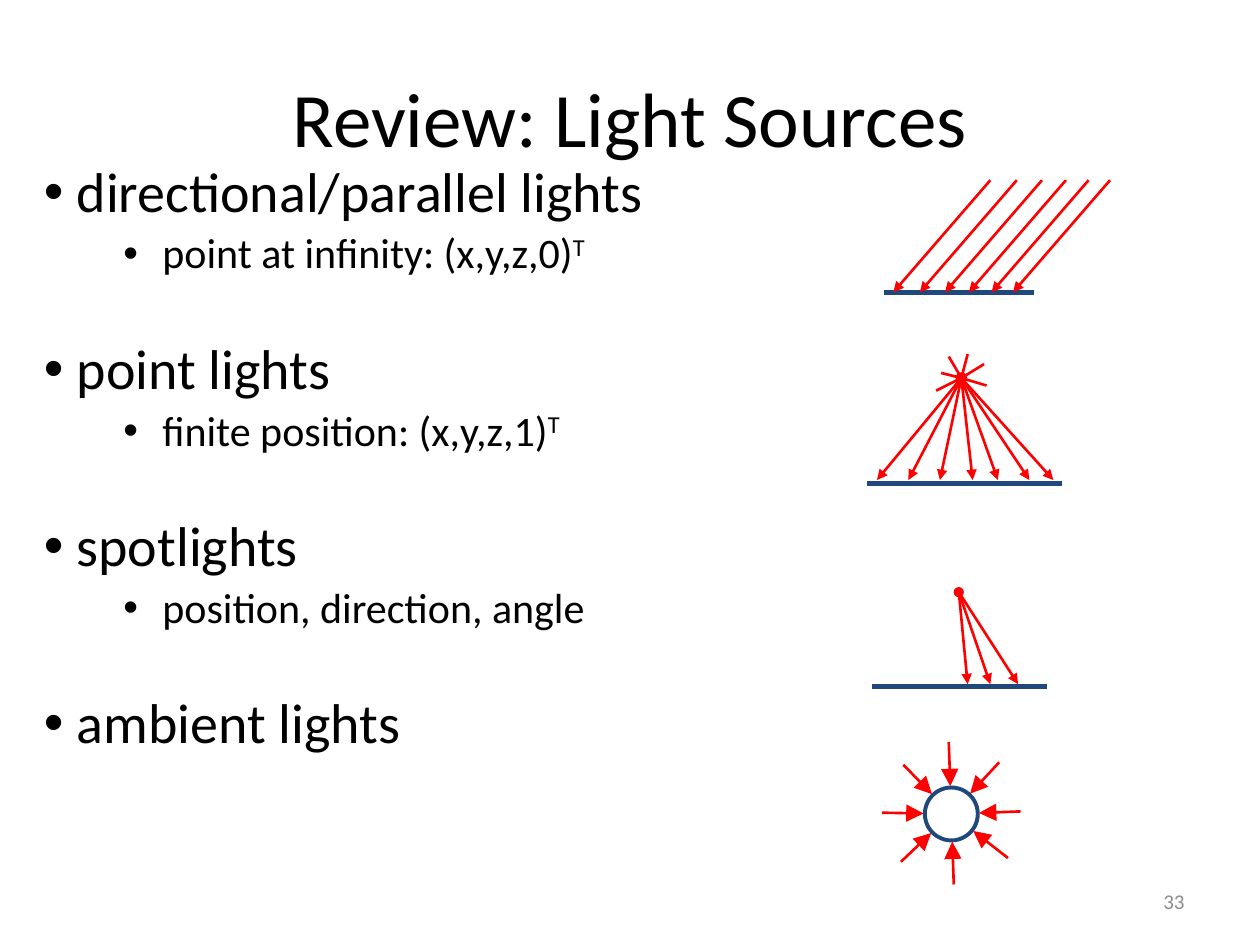
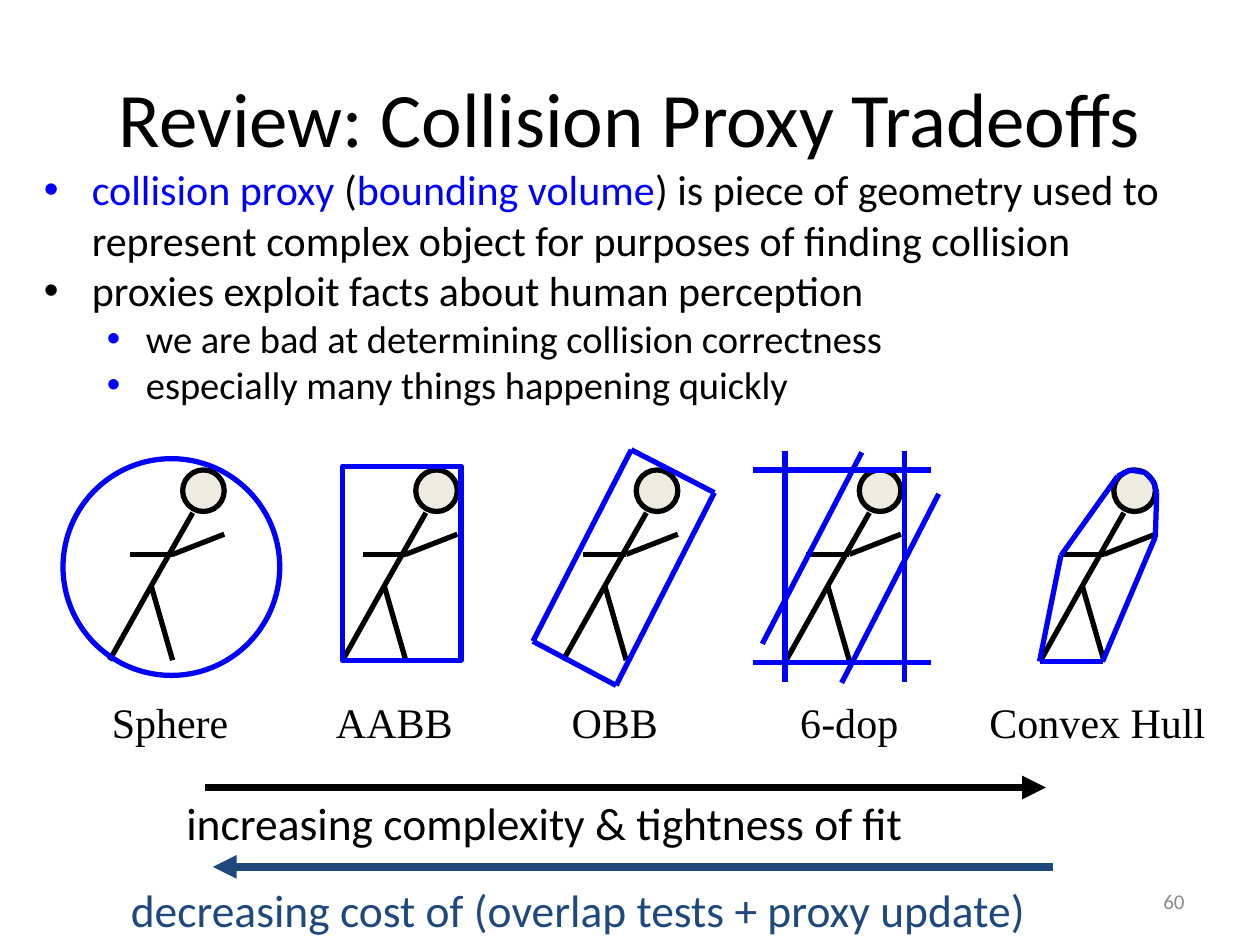
import math
from dataclasses import dataclass

import pptx
import pptx.dml.color
import pptx.enum.shapes
import pptx.enum.text
import pptx.oxml
import pptx.oxml.ns
import pptx.util

ALIGN = pptx.enum.text.PP_ALIGN
ANCHOR = pptx.enum.text.MSO_ANCHOR
SHAPE = pptx.enum.shapes.MSO_SHAPE
STRAIGHT = pptx.enum.shapes.MSO_CONNECTOR.STRAIGHT
inch = pptx.util.Inches


@dataclass(frozen=True)
class Theme:
    sans: str = "Calibri"
    serif: str = "Times New Roman"
    ink: str = "000000"
    grey: str = "8C8C8C"
    navy: str = "1F497D"
    ray: str = "FF0000"
    proxy: str = "0000FF"
    skin: str = "EEECE1"
    title: float = 44
    topic: float = 32
    caption: float = 26
    text: float = 24
    detail: float = 22
    number: float = 12
    ray_width: float = 1.5
    ring_width: float = 2.25
    thick: float = 3
    trend_width: float = 4.5


THEME = Theme()
WIDTH, HEIGHT = 10, 7.5

# ---- Light sources: topic, then detail and its superscript
LIGHTS = [
    ("directional/parallel lights", "point at infinity: (x,y,z,0)", "T"),
    ("point lights", "finite position: (x,y,z,1)", "T"),
    ("spotlights", "position, direction, angle", ""),
    ("ambient lights", "", ""),
]
# ground lines: left, right, y
GROUNDS = [(7.02, 8.21, 2.32), (6.88, 8.43, 3.84), (6.92, 8.31, 5.45)]
PARALLEL_HITS = [7.09, 7.3, 7.5, 7.69, 7.87, 8.04]
PARALLEL_RUN, PARALLEL_TOP = 0.77, 1.43
# lamps: source, dot diameter, y of the hits, x of the hits
LAMPS = [
    ((7.63, 3), 0.07, 3.81, [6.96, 7.21, 7.46, 7.72, 7.92, 8.17, 8.36]),
    ((7.61, 4.7), 0.06, 5.43, [7.68, 7.86, 8.08]),
]
SPARKS = [(7.43, 3.1), (7.47, 2.96), (7.53, 2.83), (7.68, 2.81), (7.81, 2.89), (7.83, 3.06)]
AMBIENT_CENTRE, AMBIENT_RADIUS = (7.55, 6.46), 0.21
AMBIENT_STARTS = [(7, 6.45), (8.1, 6.44), (8, 6.81), (7.15, 6.84),
                  (7.57, 7.02), (7.93, 6.05), (7.17, 6.07), (7.53, 5.89)]

# ---- Collision proxies
FACTS = [
    (0, [("collision proxy", THEME.proxy), (" (", THEME.ink), ("bounding volume", THEME.proxy),
         (") is piece of geometry used to represent complex object"
          " for purposes of finding collision", THEME.ink)]),
    (0, [("proxies exploit facts about human perception", THEME.ink)]),
    (1, [("we are bad at determining collision correctness", THEME.ink)]),
    (1, [("especially many things happening quickly", THEME.ink)]),
]
# trends: caption, colour, indent, space before, arrow start, arrow end
TRENDS = [
    ("increasing complexity & tightness of fit", THEME.ink, 0.69, 0, (1.63, 6.25), (8.3, 6.25)),
    ("decreasing cost of (overlap tests + proxy update)", THEME.navy, 0.25, 18.5,
     (8.36, 6.88), (1.69, 6.88)),
]
# Everything about a figure is measured from its hip.
HIP_Y = 4.65
HEAD = (0.25, -0.92, 0.33, 0.33)
LIMBS = [((0.33, -0.58), (0, 0)), ((0, 0), (-0.33, 0.59)), ((0, 0), (0.17, 0.59)),
         ((0.17, -0.25), (0.58, -0.41)), ((0.17, -0.25), (-0.17, -0.25))]


def closed(points):
    """Segments joining the points in a ring."""
    return list(zip(points, points[1:] + points[:1]))


OBB = closed([(-0.57, 0.44), (0.21, -1.08), (0.87, -0.74), (0.09, 0.79)])
HULL = closed([(-0.34, 0.6), (-0.17, -0.24), (0.28, -0.87), (0.38, -0.92), (0.5, -0.9),
               (0.57, -0.82), (0.59, -0.74), (0.58, -0.39), (0.16, 0.6)])
SIX_DOP = [((-0.59, -0.92), (0.82, -0.92)), ((-0.59, 0.61), (0.82, 0.61)),
           ((-0.34, -1.07), (-0.34, 0.76)), ((0.61, -1.07), (0.61, 0.76)),
           ((-0.52, 0.46), (0.27, -1.06)), ((0.11, 0.77), (0.88, -0.73))]
# proxies: name, hip x, label centre, label width, outline shape and box, segments
PROXIES = [
    ("Sphere", 1.2, 0.15, 1.17, (SHAPE.OVAL, (-0.7, -1.01, 1.72, 1.72)), []),
    ("AABB", 3.05, 0.08, 1.17, (SHAPE.RECTANGLE, (-0.33, -0.95, 0.94, 1.54)), []),
    ("OBB", 4.8, 0.08, 1.17, None, OBB),
    ("6-dop", 6.57, 0.17, 1.17, None, SIX_DOP),
    ("Convex Hull", 8.59, 0.12, 2, None, HULL),
]


def rgb(colour):
    return pptx.dml.color.RGBColor.from_string(colour)


def sub(parent, tag, **attributes):
    node = parent.makeelement(pptx.oxml.ns.qn(tag), attributes)
    parent.append(node)
    return node


def shift(point, origin):
    return point[0] + origin[0], point[1] + origin[1]


def add_box(page, left, top, width, height, anchor=ANCHOR.TOP):
    frame = page.shapes.add_textbox(inch(left), inch(top), inch(width), inch(height)).text_frame
    frame.word_wrap = True
    frame.vertical_anchor = anchor
    return frame


def add_para(frame, spans, size, colour=THEME.ink, font=THEME.sans, align=ALIGN.LEFT,
             margin=0, hang=0, bullet=None, before=0, spacing=None):
    """Write one paragraph; spans are (text, own colour or None), bullet is a colour."""
    first = frame.paragraphs[0]
    para = frame.add_paragraph() if first.runs else first
    para.alignment = align
    props = para._p.get_or_add_pPr()
    props.set("marL", str(inch(margin)))
    props.set("indent", str(inch(-hang)))
    if bullet:
        sub(sub(props, "a:buClr"), "a:srgbClr", val=bullet)
        sub(props, "a:buFont", typeface="Arial")
        sub(props, "a:buChar", char="•")
    para.space_before = pptx.util.Pt(before)
    if spacing:
        para.line_spacing = spacing
    para.font.name = font
    para.font.size = pptx.util.Pt(size)
    para.font.color.rgb = rgb(colour)
    for text, own_colour in spans:
        span = para.add_run()
        span.text = text
        if own_colour:
            span.font.color.rgb = rgb(own_colour)
    return para


def add_line(page, start, end, colour, width, head=None):
    """Straight line; head is the arrowhead size at its end."""
    line = page.shapes.add_connector(STRAIGHT, *(inch(v) for v in (*start, *end)))
    line.line.color.rgb = rgb(colour)
    line.line.width = pptx.util.Pt(width)
    if head:
        sub(line.line._get_or_add_ln(), "a:tailEnd", type="triangle", w=head, len=head)
    sub(line._element.spPr, "a:effectLst")


def add_outline(page, kind, box, colour, width, fill=None):
    shape = page.shapes.add_shape(kind, *(inch(v) for v in box))
    shape.shadow.inherit = False
    shape.line.color.rgb = rgb(colour)
    shape.line.width = pptx.util.Pt(width)
    if fill:
        shape.fill.solid()
        shape.fill.fore_color.rgb = rgb(fill)
    else:
        shape.fill.background()


def add_disc(page, centre, diameter, colour, width, fill=None):
    corner = shift(centre, (-diameter / 2, -diameter / 2))
    add_outline(page, SHAPE.OVAL, (*corner, diameter, diameter), colour, width, fill)


def add_page(deck, title, number):
    page = deck.slides.add_slide(deck.slide_layouts[6])
    add_para(add_box(page, 7.17, 6.95, 2.33, 0.4, ANCHOR.MIDDLE), [(number, None)],
             THEME.number, THEME.grey, align=ALIGN.RIGHT)
    add_para(add_box(page, 0.05 * WIDTH, 0.04 * HEIGHT, 0.9 * WIDTH, 1.25, ANCHOR.MIDDLE),
             [(title, None)], THEME.title, align=ALIGN.CENTER)
    return page


def draw_lights(page):
    def ray(start, end, head="med"):
        add_line(page, start, end, THEME.ray, THEME.ray_width, head)

    for left, right, y in GROUNDS:
        add_line(page, (left, y), (right, y), THEME.navy, THEME.thick)
    for x in PARALLEL_HITS:
        ray((x + PARALLEL_RUN, PARALLEL_TOP), (x, GROUNDS[0][2]))
    for source, diameter, y, hits in LAMPS:
        add_disc(page, source, diameter, THEME.ray, THEME.ray_width, THEME.ray)
        for x in hits:
            ray(source, (x, y))
    for tip in SPARKS:
        ray(LAMPS[0][0], tip, None)

    add_disc(page, AMBIENT_CENTRE, 2 * AMBIENT_RADIUS, THEME.navy, THEME.ring_width)
    for start in AMBIENT_STARTS:
        across, down = (a - b for a, b in zip(start, AMBIENT_CENTRE))
        share = (AMBIENT_RADIUS + 0.01) / math.hypot(across, down)
        ray(start, shift(AMBIENT_CENTRE, (across * share, down * share)), "lg")


def light_sources(deck):
    page = add_page(deck, "Review: Light Sources", "33")
    frame = add_box(page, 0.25, 1.25, 6.12, 5.46)
    for row, (topic, detail, power) in enumerate(LIGHTS):
        add_para(frame, [(topic, None)], THEME.topic, margin=0.26, hang=0.26,
                 bullet=THEME.ink, before=36 if row else 0, spacing=0.9)
        if detail:
            spans = [(text, None) for text in (detail, power) if text]
            para = add_para(frame, spans, THEME.text, margin=0.94, hang=0.31,
                            bullet=THEME.ink, before=4.8, spacing=0.9)
            if power:
                para.runs[-1]._r.get_or_add_rPr().set("baseline", "30000")
    draw_lights(page)


def draw_proxy(page, name, hip_x, label_shift, label_width, outline, segments):
    hip = (hip_x, HIP_Y)
    add_outline(page, SHAPE.OVAL, (*shift(HEAD, hip), *HEAD[2:]),
                THEME.ink, THEME.thick, THEME.skin)
    for colour, lines in ((THEME.ink, LIMBS), (THEME.proxy, segments)):
        for start, end in lines:
            add_line(page, shift(start, hip), shift(end, hip), colour, THEME.thick)
    if outline:
        kind, box = outline
        add_outline(page, kind, (*shift(box, hip), *box[2:]), THEME.proxy, THEME.thick)
    label = add_box(page, hip_x + label_shift - label_width / 2, 5.48, label_width, 0.5)
    add_para(label, [(name, None)], THEME.text, font=THEME.serif, align=ALIGN.CENTER)


def collision_proxies(deck):
    page = add_page(deck, "Review: Collision Proxy Tradeoffs", "60")
    captions = add_box(page, 0.69, 6.26, 8.88, 1.2)
    for caption, colour, indent, before, start, end in TRENDS:
        add_para(captions, [(caption, None)], THEME.caption, colour,
                 margin=indent, before=before)
        add_line(page, start, end, colour, THEME.trend_width, "med")
    for proxy in PROXIES:
        draw_proxy(page, *proxy)
    facts = add_box(page, 0.25, 1.25, 9.75, 1)
    levels = [(THEME.text, 0.38, 0.38), (THEME.detail, 0.81, 0.31)]
    for level, spans in FACTS:
        size, margin, hang = levels[level]
        add_para(facts, spans, size, margin=margin, hang=hang,
                 bullet=THEME.proxy if level else spans[0][1])


def main():
    deck = pptx.Presentation()
    deck.slide_width, deck.slide_height = inch(WIDTH), inch(HEIGHT)
    light_sources(deck)
    collision_proxies(deck)
    deck.save("out.pptx")


if __name__ == "__main__":
    main()
